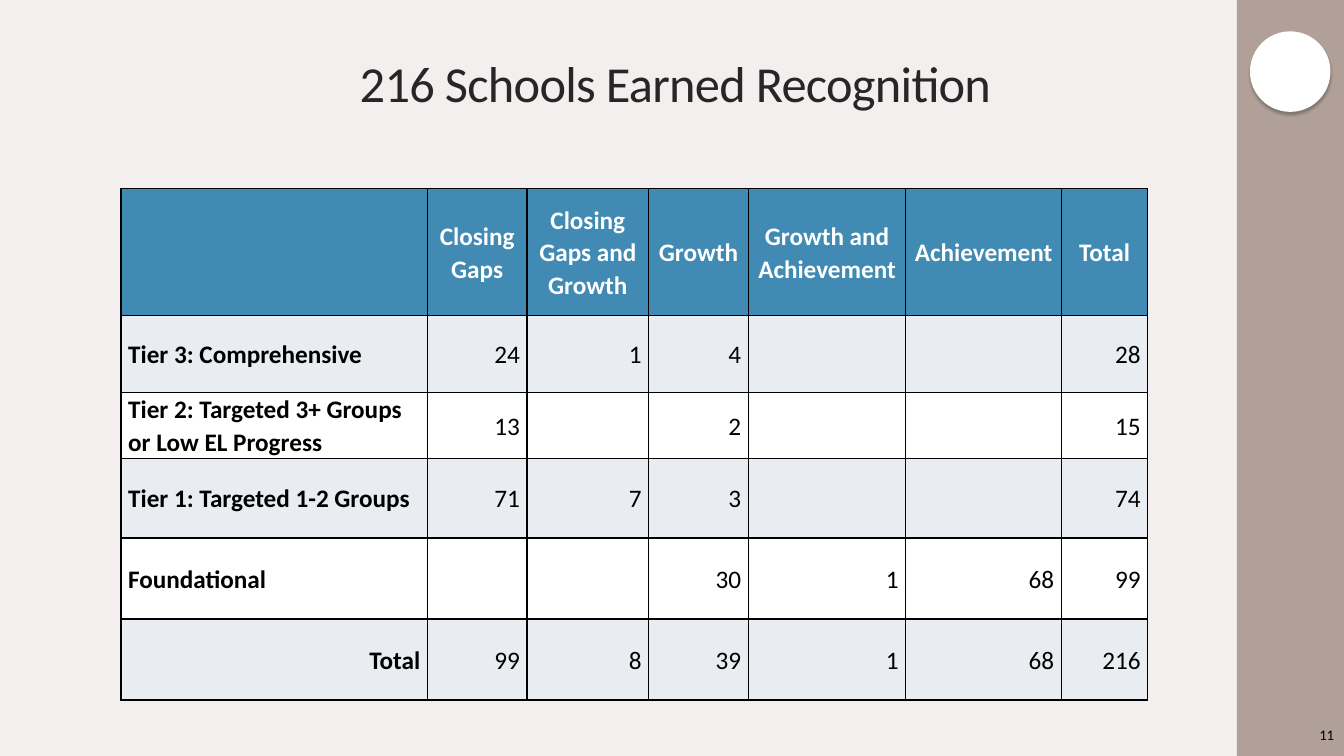
from lxml.etree import SubElement as Sub
from pptx import Presentation
from pptx.dml.color import RGBColor as Rgb
from pptx.enum.shapes import MSO_SHAPE as Kind
from pptx.enum.text import MSO_ANCHOR as Anchor, PP_ALIGN as Align
from pptx.oxml.ns import qn
from pptx.util import Cm, Pt

TITLE = "216 Schools Earned Recognition"
PAGE = "11"
HEAD = ["", "Closing Gaps", "Closing Gaps and Growth", "Growth",
        "Growth and Achievement", "Achievement", "Total"]
ROWS = [
    HEAD,
    ["Tier 3: Comprehensive", "24", "1", "4", "", "", "28"],
    ["Tier 2: Targeted 3+ Groups or Low EL Progress", "13", "", "2", "", "", "15"],
    ["Tier 1: Targeted 1-2 Groups", "71", "7", "3", "", "", "74"],
    ["Foundational", "", "", "30", "1", "68", "99"],
    ["Total", "99", "8", "39", "1", "68", "216"],
]
WIDE = [7.72, 2.51, 3.07, 2.51, 3.97, 3.92, 2.18]
HIGH = [3.21, 1.93, 1.66, 2.01, 2.04, 2.04]
HUE = {"back": "F2EFEE", "bar": "B0A097", "white": "FFFFFF", "title": "262626",
       "head": "418AB3", "band": "E9EDF2", "black": "000000", "shade": "373737"}
FONT = "Calibri"


def paint(fill, hue):
    fill.solid()
    fill.fore_color.rgb = Rgb.from_string(HUE[hue])


def tint(node, hue):
    return Sub(node, qn("a:srgbClr"), val=HUE[hue])


def write(para, text, size, hue, align, bold=False, lead=1.0):
    para.alignment, para.line_spacing = align, lead
    run = para.add_run()
    run.text = text
    form = {"name": FONT, "size": Pt(size), "bold": bold}
    for key, val in form.items():
        setattr(run.font, key, val)
    run.font.color.rgb = Rgb.from_string(HUE[hue])
    return run


def label(box, *form):
    frame = slide.shapes.add_textbox(*map(Cm, box)).text_frame
    frame.word_wrap = True
    frame.vertical_anchor = Anchor.MIDDLE
    return write(frame.paragraphs[0], *form)


def shape(kind, box, hue):
    item = slide.shapes.add_shape(kind, *map(Cm, box))
    item.shadow.inherit = False
    paint(item.fill, hue)
    item.line.fill.background()
    return item


def edge(cell):
    prop = cell._tc.get_or_add_tcPr()
    for side in "LRTB":
        line = Sub(prop, qn(f"a:ln{side}"), w=str(Pt(1)))
        tint(Sub(line, qn("a:solidFill")), "black")


def fit(cell, text, row, col):
    form = {"margin_left": Cm(0.18), "margin_right": Cm(0.18), "margin_top": 0,
            "margin_bottom": 0, "vertical_anchor": Anchor.MIDDLE}
    for key, val in form.items():
        setattr(cell, key, val)
    edge(cell)
    paint(cell.fill, "head" if row == 0 else "band" if row % 2 else "white")
    if text:
        left = col == 0 and row < len(ROWS) - 1
        align = Align.CENTER if row == 0 else Align.LEFT if left else Align.RIGHT
        write(cell.text_frame.paragraphs[0], text, 18, "black" if row else "white",
              align, row == 0 or col == 0, 1.07)


deck = Presentation()
deck.slide_width, deck.slide_height = Cm(33.87), Cm(19.05)
slide = deck.slides.add_slide(deck.slide_layouts[6])
paint(slide.background.fill, "back")

shape(Kind.RECTANGLE, (31.17, 0, 2.7, 19.05), "bar")
disc = shape(Kind.OVAL, (31.5, 0.79, 2.03, 2.03), "white")
glow = Sub(disc._element.spPr.find(qn("a:effectLst")), qn("a:outerShdw"),
           blurRad=str(Pt(2)), dist=str(Pt(2)), dir="5400000", rotWithShape="0")
Sub(tint(glow, "shade"), qn("a:alpha"), val="40000")

name = label((3.05, 0.79, 27.94, 2.82), TITLE, 36, "title", Align.CENTER, False, 0.85)
name.font._element.set("spc", "-50")

grid = slide.shapes.add_table(len(ROWS), len(HEAD), Cm(3.05), Cm(4.75),
                              Cm(sum(WIDE)), Cm(sum(HIGH))).table
grid.horz_banding = False
for col, wide in zip(grid.columns, WIDE):
    col.width = Cm(wide)
for row, high in zip(grid.rows, HIGH):
    row.height = Cm(high)
for r, row in enumerate(ROWS):
    for c, text in enumerate(row):
        fit(grid.cell(r, c), text, r, c)

label((31.17, 18.01, 2.7, 1.02), PAGE, 10.5, "black", Align.RIGHT)
deck.save("out.pptx")
